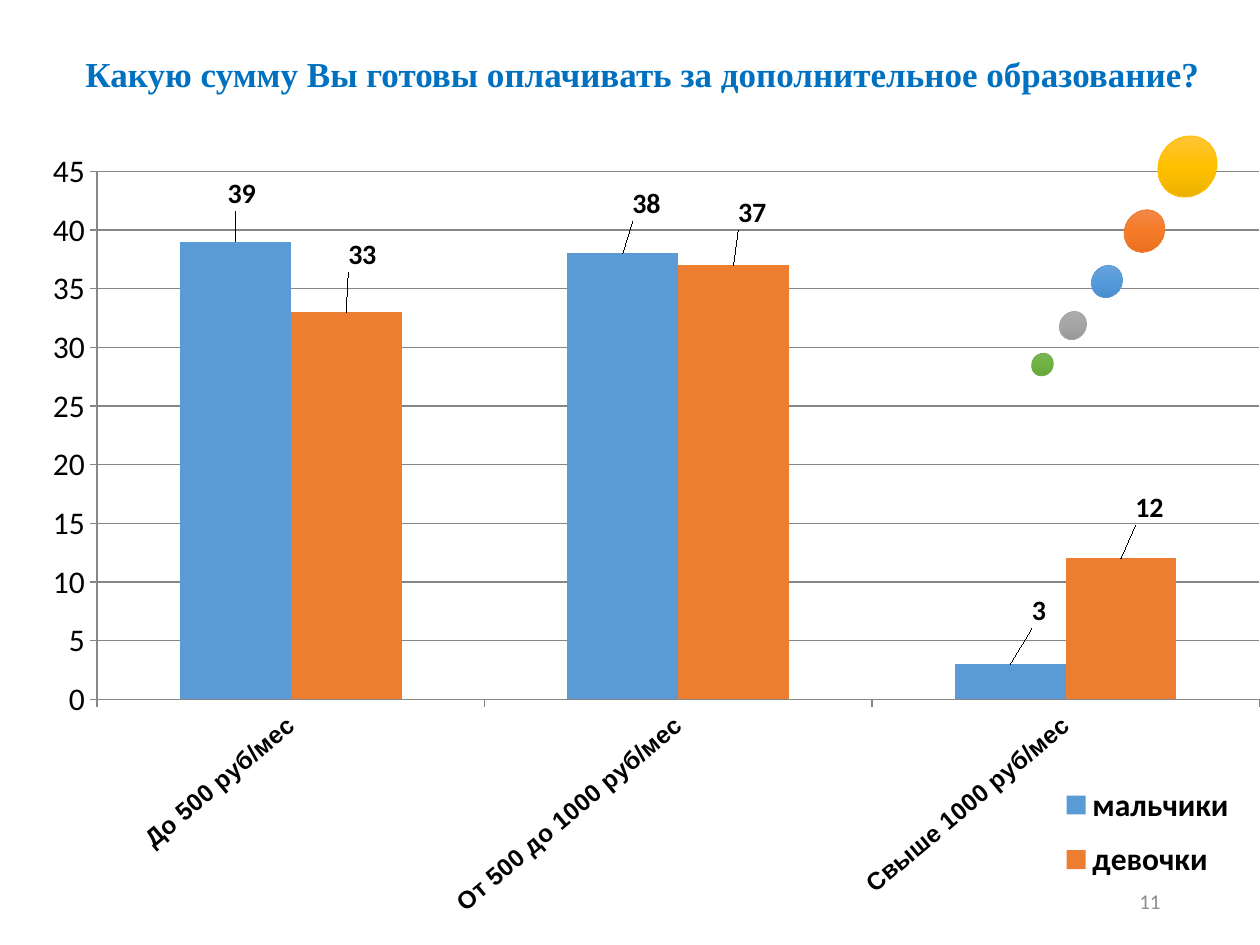
from pptx import Presentation
from pptx.chart.data import CategoryChartData
from pptx.dml.color import RGBColor
from pptx.enum.chart import XL_CHART_TYPE as Kind, XL_LABEL_POSITION as Spot
from pptx.enum.chart import XL_LEGEND_POSITION as Side, XL_TICK_MARK as Tick
from pptx.enum.shapes import MSO_SHAPE as Form
from pptx.enum.text import MSO_ANCHOR as Anchor, PP_ALIGN as Align
from pptx.oxml import parse_xml
from pptx.oxml.ns import nsdecls
from pptx.util import Emu, Pt

PX = 914400 / 126
BLACK = RGBColor(0x00, 0x00, 0x00)
TITLE = RGBColor(0x00, 0x70, 0xC0)
GRAY = RGBColor(0x8C, 0x8C, 0x8C)
RULE = RGBColor(0x86, 0x86, 0x86)
BLUE = RGBColor(0x5B, 0x9B, 0xD5)
ORANGE = RGBColor(0xED, 0x7D, 0x31)
GOLD = RGBColor(0xFF, 0xC0, 0x00)
SILVER = RGBColor(0xA5, 0xA5, 0xA5)
GREEN = RGBColor(0x70, 0xAD, 0x47)

prs = Presentation()
prs.slide_width, prs.slide_height = Emu(round(1260 * PX)), Emu(round(945 * PX))
slide = prs.slides.add_slide(prs.slide_layouts[6])


def write(text, box, size, color, font, align, bold=False, space=1.0):
    frame = slide.shapes.add_textbox(*[Emu(round(v * PX)) for v in box]).text_frame
    frame.word_wrap = True
    frame.vertical_anchor = Anchor.MIDDLE
    para = frame.paragraphs[0]
    para.alignment, para.line_spacing = align, space
    run = para.add_run()
    run.text = text
    run.font.size, run.font.name, run.font.bold = Pt(size), font, bold
    run.font.color.rgb = color


def layout(x, y, w=None, h=None, inner=False):
    """Manual chart layout; without a size, x and y are offsets."""
    tags = [("layoutTarget", "inner")] if inner else []
    if w:
        tags += [("xMode", "edge"), ("yMode", "edge")]
    tags += [("x", x), ("y", y)]
    if w:
        tags += [("w", w), ("h", h)]
    body = "".join(f'<c:{tag} val="{val}"/>' for tag, val in tags)
    return parse_xml(f'<c:layout {nsdecls("c")}><c:manualLayout>{body}'
                     '</c:manualLayout></c:layout>')


# Page number and title
write("11", (890, 876, 283, 50), 12, GRAY, "Calibri", Align.RIGHT)
write("Какую сумму Вы готовы оплачивать за дополнительное образование?",
      (58, 40, 1169, 72), 20, TITLE, "Times New Roman", Align.CENTER, bold=True, space=0.9)

# Column chart
data = CategoryChartData()
data.categories = ["До 500 руб/мес", "От 500 до 1000 руб/мес", "Свыше 1000 руб/мес"]
data.add_series("мальчики", (39, 38, 3))
data.add_series("девочки", (33, 37, 12))
WIDE, HIGH = 1241, 787
spot = [Emu(round(v * PX)) for v in (19, 132, WIDE, HIGH)]
chart = slide.shapes.add_chart(Kind.COLUMN_CLUSTERED, *spot, data).chart
chart.has_title = False
chart.font.size, chart.font.name = Pt(18), "Calibri"
chart.font.color.rgb = BLACK
area = chart._chartSpace.chart.plotArea
for old in area.xpath("c:layout"):
    area.remove(old)
area.insert(0, layout(0.063, 0.05, 0.937, 0.671, inner=True))

# Axes
cat, val = chart.category_axis, chart.value_axis
for axis in (cat, val):
    axis.major_tick_mark, axis.minor_tick_mark = Tick.OUTSIDE, Tick.NONE
    axis.format.line.color.rgb = RULE
cat.tick_labels.font.size = Pt(14)
cat.tick_labels.font.name = "Arial"
cat.tick_labels.font.bold = True
cat._element.xpath("c:txPr/a:bodyPr")[0].set("rot", str(-40 * 60000))
val.minimum_scale, val.maximum_scale, val.major_unit = 0, 45, 5
val.has_major_gridlines = True
val.major_gridlines.format.line.color.rgb = RULE

# Columns, with each value label moved by a px offset
plot = chart.plots[0]
plot.gap_width, plot.overlap, plot.vary_by_categories = 150, 0, False
moves = [[(6, -25), (23, -27), (28, -31)], [(16, -35), (18, -30), (28, -28)]]
for series, color, shifts in zip(plot.series, (BLUE, ORANGE), moves):
    series.format.fill.solid()
    series.format.fill.fore_color.rgb = color
    for i in range(len(shifts)):
        label = series.points[i].data_label
        label.position = Spot.OUTSIDE_END
        label.font.size, label.font.bold = Pt(16), True
        label.font.color.rgb = BLACK
    for item, (dx, dy) in zip(series._element.xpath("c:dLbls/c:dLbl"), shifts):
        item.insert(1, layout(round(dx / WIDE, 3), round(dy / HIGH, 3)))

# Legend
chart.has_legend = True
legend = chart.legend
legend.position, legend.include_in_layout = Side.RIGHT, False
legend.font.bold, legend.font.size = True, Pt(18)
legend.font.color.rgb = BLACK
for old in legend._element.xpath("c:layout"):
    legend._element.remove(old)
legend._element.xpath("c:legendPos")[0].addnext(layout(0.84, 0.81, 0.14, 0.16))

# Rising chain of dots
dots = [
    ((1159, 135, 57, 63), GOLD, ("FFC64B", "FFC000", "E3AB00")),
    ((1125, 209, 39, 44), ORANGE, ("F18C57", "F67B28", "E56C19")),
    ((1092, 265, 30, 33), BLUE, ("71A6DB", "559BDB", "448ACA")),
    ((1060, 311, 26, 29), SILVER, ("AFAFAF", "A5A5A5", "939393")),
    ((1032, 353, 21, 23), GREEN, ("81B861", "6FB242", "62A336")),
]
for box, edge, tones in dots:
    dot = slide.shapes.add_shape(Form.FLOWCHART_CONNECTOR, *[Emu(round(v * PX)) for v in box])
    dot.rotation = 215.5
    dot.shadow.inherit = False
    dot.line.color.rgb, dot.line.width = edge, Pt(0.5)
    stops = "".join(f'<a:gs pos="{i * 50000}"><a:srgbClr val="{tone}"/></a:gs>'
                    for i, tone in enumerate(tones))
    dot._element.spPr.xpath("a:prstGeom")[0].addnext(parse_xml(
        f'<a:gradFill {nsdecls("a")} rotWithShape="0"><a:gsLst>{stops}</a:gsLst>'
        '<a:lin ang="5400000" scaled="0"/></a:gradFill>'))

prs.save("out.pptx")
